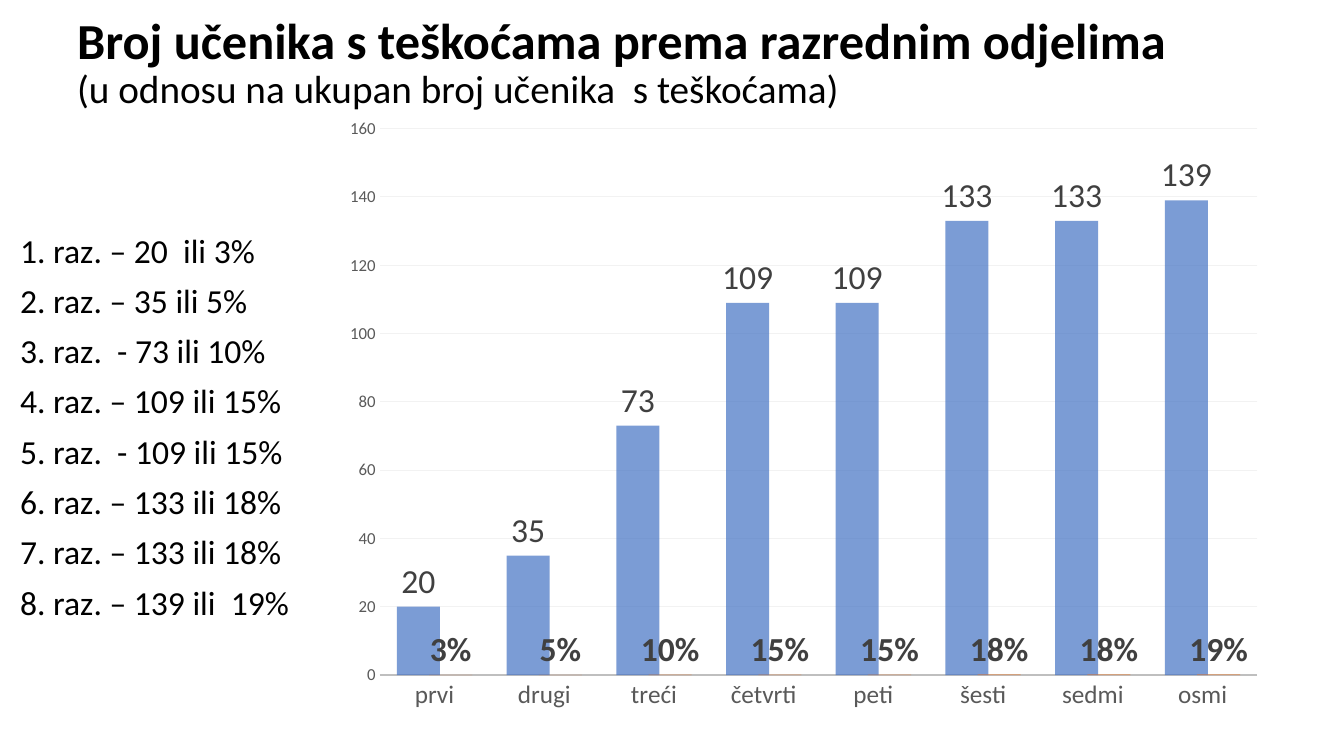
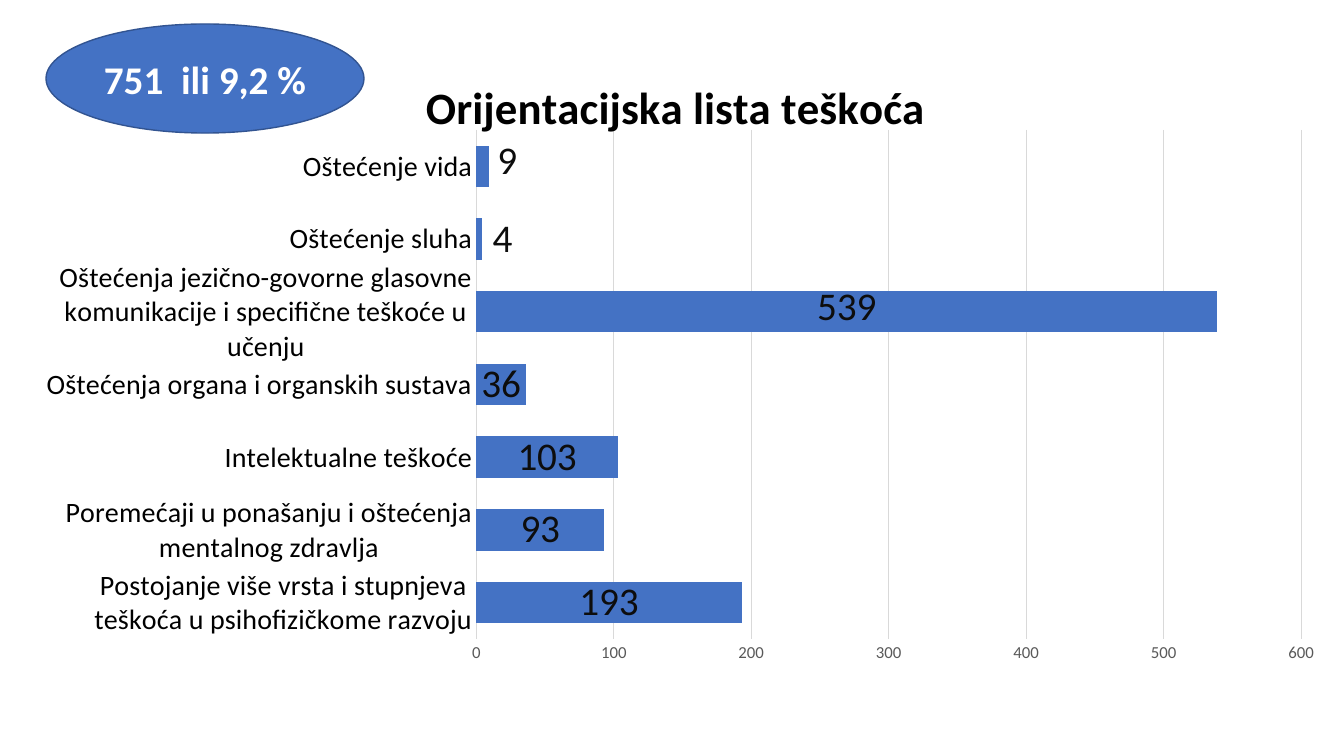
from lxml import etree
from pptx import Presentation
from pptx import util as u
from pptx.chart.data import CategoryChartData
from pptx.dml.color import RGBColor
from pptx.enum import chart as charts, shapes, text
from pptx.oxml.ns import qn

PX = 914400 / 100.8
FONT = "Calibri"
BLACK, WHITE, GRAY = "000000", "FFFFFF", "595959"
BLUE, ORANGE, GRID = "4472C4", "ED7D31", "D9D9D9"
rgb = RGBColor.from_string


def set_layout(parent, index, **values):
    for old in parent.findall(qn("c:layout")):
        parent.remove(old)
    layout = etree.Element(qn("c:layout"))
    manual = etree.SubElement(layout, qn("c:manualLayout"))
    for name, value in values.items():
        etree.SubElement(manual, qn("c:" + name)).set("val", str(value))
    parent.insert(index, layout)


def add_bar_chart(slide, kind, box, plot_box, categories, series_list, style):
    data = CategoryChartData()
    data.categories = categories
    for name, values, number_format in series_list:
        data.add_series(name, values, number_format)
    chart = slide.shapes.add_chart(kind, *[u.Emu(round(n * PX)) for n in box], data).chart
    chart.has_legend = False
    chart.has_title = False
    chart.font.name = FONT
    chart.font.size = u.Pt(10)
    plot = chart.plots[0]
    plot.vary_by_categories = False
    plot.gap_width, plot.overlap = style["gap"], style["overlap"]
    x, y, w, h = plot_box
    set_layout(chart._chartSpace.chart.plotArea, 0, layoutTarget="inner",
               xMode="edge", yMode="edge", x=x, y=y, w=w, h=h)

    for axis, size, color in ((chart.category_axis, style["size"], style["color"]),
                              (chart.value_axis, 12, GRAY)):
        axis.major_tick_mark = axis.minor_tick_mark = charts.XL_TICK_MARK.NONE
        axis.tick_labels.font.size = u.Pt(size)
        axis.tick_labels.font.name = FONT
        axis.tick_labels.font.color.rgb = rgb(color)
    chart.category_axis.has_major_gridlines = False
    axis_line = chart.category_axis.format.line
    axis_line.color.rgb = rgb(style["axis"])
    axis_line.width = u.Pt(style["axis_width"])
    value_axis = chart.value_axis
    value_axis.minimum_scale = 0
    value_axis.maximum_scale, value_axis.major_unit = style["scale"]
    value_axis.format.line.fill.background()
    value_axis.has_major_gridlines = True
    value_axis.major_gridlines.format.line.color.rgb = rgb(style["grid"])
    value_axis.major_gridlines.format.line.width = u.Pt(0.75)

    for series, color in zip(plot.series, (BLUE, ORANGE)):
        series.invert_if_negative = False
        series.format.fill.solid()
        series.format.fill.fore_color.rgb = rgb(color)
        labels = series.data_labels
        labels.show_value = True
        labels.font.name = FONT
        labels.font.size = u.Pt(style["label_size"])
        labels.font.color.rgb = rgb(style["label_color"])
    return chart


presentation = Presentation()
presentation.slide_width = u.Emu(12192000)
presentation.slide_height = u.Emu(6858000)

slide = presentation.slides.add_slide(presentation.slide_layouts[1])
title, body = slide.shapes.title, slide.placeholders[1]
for shape, box in ((title, (67, 39, 1159, 50)), (body, (10, 229, 326, 437))):
    shape.left, shape.top, shape.width, shape.height = [u.Emu(round(n * PX)) for n in box]
    shape.text_frame.word_wrap = True
    shape.text_frame.auto_size = text.MSO_AUTO_SIZE.NONE

title.text_frame.vertical_anchor = text.MSO_ANCHOR.MIDDLE
paragraph = title.text_frame.paragraphs[0]
paragraph.alignment = text.PP_ALIGN.LEFT
paragraph.line_spacing = 0.9
paragraph.font.name = FONT
paragraph.font.color.rgb = rgb(BLACK)
heading = paragraph.add_run()
heading.text = "Broj učenika s teškoćama prema razrednim odjelima"
heading.font.size, heading.font.bold = u.Pt(36), True
paragraph.add_line_break()
subheading = paragraph.add_run()
subheading.text = "(u odnosu na ukupan broj učenika  s teškoćama)"
subheading.font.size, subheading.font.bold = u.Pt(28), False

body.text_frame.text = "\n".join((
    "1. raz. – 20  ili 3%",
    "2. raz. – 35 ili 5%",
    "3. raz.  - 73 ili 10%",
    "4. raz. – 109 ili 15%",
    "5. raz.  - 109 ili 15%",
    "6. raz. – 133 ili 18%",
    "7. raz. – 133 ili 18%",
    "8. raz. – 139 ili  19%",
))
for number, paragraph in enumerate(body.text_frame.paragraphs):
    properties = paragraph._p.get_or_add_pPr()
    properties.set("marL", "0")
    properties.set("indent", "0")
    etree.SubElement(properties, qn("a:buNone"))
    paragraph.line_spacing = 0.9
    paragraph.space_before = u.Pt(10 if number else 0)
    paragraph.font.name = FONT
    paragraph.font.size = u.Pt(24)
    paragraph.font.color.rgb = rgb(BLACK)

grade_chart = add_bar_chart(
    slide, charts.XL_CHART_TYPE.COLUMN_CLUSTERED, (336, 114, 971, 612),
    (0.045, 0.024, 0.904, 0.893),
    ("prvi", "drugi", "treći", "četvrti", "peti", "šesti", "sedmi", "osmi"),
    (("Series 1", (20, 35, 73, 109, 109, 133, 133, 139), "General"),
     ("Series 2", (0.03, 0.05, 0.1, 0.15, 0.15, 0.18, 0.18, 0.19), "0%")),
    dict(gap=80, overlap=25, size=18, color=GRAY, axis="BFBFBF", axis_width=1.25,
         grid="F2F2F2", scale=(160, 20), label_size=24, label_color="404040"))
for series in grade_chart.plots[0].series:
    series.data_labels.position = charts.XL_LABEL_POSITION.OUTSIDE_END
    fill_color = series._element.find(qn("c:spPr")).find(".//" + qn("a:srgbClr"))
    etree.SubElement(fill_color, qn("a:alpha")).set("val", "70000")
percent_labels = grade_chart.plots[0].series[1].data_labels
percent_labels.font.bold = True
percent_labels.number_format = "0%"
percent_labels.number_format_is_linked = False

slide = presentation.slides.add_slide(presentation.slide_layouts[6])
difficulty_chart = add_bar_chart(
    slide, charts.XL_CHART_TYPE.BAR_STACKED, (21, 24, 1301, 726),
    (0.35, 0.146, 0.634, 0.701),
    ("Postojanje više vrsta i stupnjeva teškoća u psihofizičkome razvoju",
     "Poremećaji u ponašanju i oštećenja mentalnog zdravlja",
     "Intelektualne teškoće",
     "Oštećenja organa i organskih sustava",
     "Oštećenja jezično-govorne glasovne komunikacije i specifične teškoće u učenju",
     "Oštećenje sluha",
     "Oštećenje vida"),
    (("Series 1", (193, 93, 103, 36, 539, 4, 9), "General"),),
    dict(gap=75, overlap=100, size=20, color=BLACK, axis=GRID, axis_width=0.75,
         grid=GRID, scale=(600, 100), label_size=28, label_color="0D0D0D"))
difficulty_chart.has_title = True
chart_title = difficulty_chart.chart_title
chart_title.text_frame.text = "Orijentacijska lista teškoća"
title_font = chart_title.text_frame.paragraphs[0].font
title_font.name, title_font.size, title_font.bold = FONT, u.Pt(32), True
title_font.color.rgb = rgb(BLACK)
set_layout(chart_title._element, 1, xMode="edge", yMode="edge", x=0.305, y=0.06)

series = difficulty_chart.plots[0].series[0]
for index, x, y in ((4, 0, -0.006), (5, 0.018, 0), (6, 0.019, -0.007)):
    font = series.points[index].data_label.font
    font.name, font.size = FONT, u.Pt(28)
    font.color.rgb = rgb("0D0D0D")
for label, (x, y) in zip(series._element.iter(qn("c:dLbl")),
                         ((0, -0.006), (0.018, 0), (0.019, -0.007))):
    set_layout(label, 1, x=x, y=y)

total = slide.shapes.add_shape(shapes.MSO_SHAPE.OVAL,
                               *[u.Emu(round(n * PX)) for n in (46, 24, 318, 109)])
total.shadow.inherit = False
total.fill.solid()
total.fill.fore_color.rgb = rgb(BLUE)
total.line.color.rgb = rgb("325491")
total.line.width = u.Pt(1)
total.text_frame.word_wrap = True
total.text_frame.vertical_anchor = text.MSO_ANCHOR.MIDDLE
paragraph = total.text_frame.paragraphs[0]
paragraph.text = "751  ili 9,2 %"
paragraph.alignment = text.PP_ALIGN.CENTER
paragraph.font.name, paragraph.font.size, paragraph.font.bold = FONT, u.Pt(28), True
paragraph.font.color.rgb = rgb(WHITE)

presentation.save("out.pptx")
